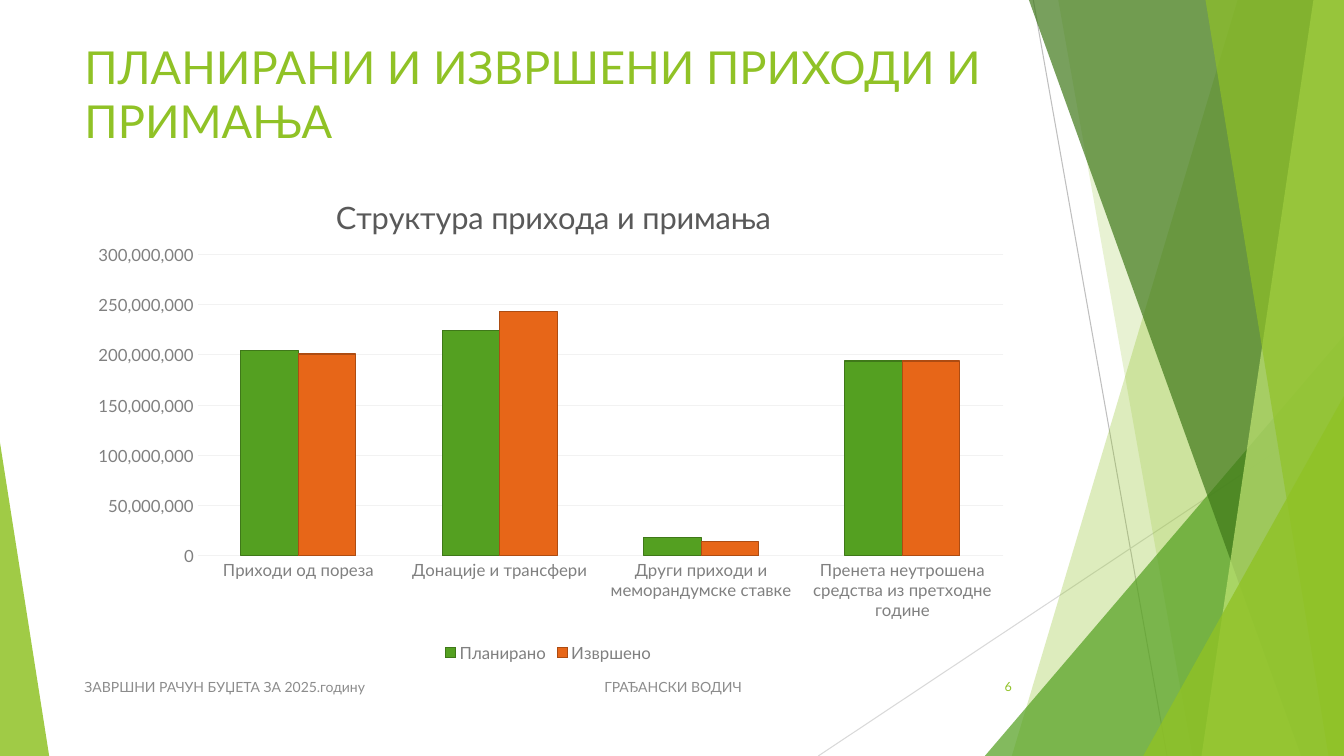
"""Build the slide comparing planned and executed budget revenues."""
from lxml import etree
from pptx import Presentation
from pptx.chart.data import CategoryChartData
from pptx.dml.color import RGBColor
from pptx.enum.chart import XL_CHART_TYPE, XL_LEGEND_POSITION, XL_TICK_MARK
from pptx.enum.shapes import MSO_CONNECTOR, MSO_SHAPE
from pptx.enum.text import MSO_ANCHOR, PP_ALIGN
from pptx.oxml.ns import qn
from pptx.util import Cm, Pt

COLUMNS = XL_CHART_TYPE.COLUMN_CLUSTERED
BOTTOM = XL_LEGEND_POSITION.BOTTOM
NO_TICK = XL_TICK_MARK.NONE
STRAIGHT = MSO_CONNECTOR.STRAIGHT
TRIANGLE = MSO_SHAPE.ISOSCELES_TRIANGLE
TOP, MIDDLE = MSO_ANCHOR.TOP, MSO_ANCHOR.MIDDLE
LEFT, RIGHT = PP_ALIGN.LEFT, PP_ALIGN.RIGHT

FONT = "Lato"
WIDTH, HEIGHT = 33.87, 19.05
GREEN, GREY = "90C226", "808080"


def rgb(code):
    return RGBColor.from_string(code)


def style(font, size, color):
    font.name = FONT
    font.size = Pt(size)
    font.bold = False
    font.color.rgb = rgb(color)


deck = Presentation()
deck.slide_width, deck.slide_height = Cm(WIDTH), Cm(HEIGHT)
page = deck.slides.add_slide(deck.slide_layouts[6])

for x1, y1, x2, y2, color in [
    (26.04, 0, 29.41, HEIGHT, "BFBFBF"),
    (WIDTH, 10.24, 20.62, HEIGHT, "D9D9D9"),
]:
    ray = page.shapes.add_connector(STRAIGHT, Cm(x1), Cm(y1), Cm(x2), Cm(y2))
    ray.line.color.rgb = rgb(color)
    ray.line.width = Pt(0.75)
    etree.SubElement(ray._element.spPr, qn("a:effectLst"))

# Bands give their left edge at top and bottom; triangles give left, width, height and apex.
facets = [
    ((31.19, 25.5), GREEN, 30),
    ((26.67, 30.05), GREEN, 20),
    ((24.82, 9.05, 10.59, 1), "54A021", 72),
    ((25.93, 32.79), "3F7819", 70),
    ((33.1, 30.28), "C0E474", 70),
    ((30.38, 33.48), GREEN, 65),
    ((28.81, 5.06, 9.07, 1), GREEN, 80),
    ((0, 1.24, 7.9, 0), GREEN, 85),
]
for geometry, color, opacity in facets:
    if len(geometry) == 2:
        top_x, bottom_x = geometry
        outline = page.shapes.build_freeform(top_x * 100, 0, scale=Cm(0.01))
        outline.add_line_segments(
            [(x * 100, y * 100) for x, y in
             [(WIDTH, 0), (WIDTH, HEIGHT), (bottom_x, HEIGHT)]], close=True)
        facet = outline.convert_to_shape()
    else:
        left, width, height, apex = geometry
        facet = page.shapes.add_shape(
            TRIANGLE, Cm(left), Cm(HEIGHT - height), Cm(width), Cm(height))
        facet.adjustments[0] = apex
    facet.shadow.inherit = False
    facet.line.fill.background()
    facet.fill.solid()
    facet.fill.fore_color.rgb = rgb(color)
    paint = facet._element.spPr.find(qn("a:solidFill"))[0]
    etree.SubElement(paint, qn("a:alpha"), val=str(opacity * 1000))

texts = [
    ("ПЛАНИРАНИ И ИЗВРШЕНИ ПРИХОДИ И ПРИМАЊА",
     (1.88, 0.86, 23.88, 3.28), 32.4, GREEN, TOP, LEFT),
    ("6", (23.85, 16.79, 1.9, 1.02), 9, GREEN, MIDDLE, RIGHT),
    ("ЗАВРШНИ РАЧУН БУЏЕТА ЗА 2025.годину\tГРАЂАНСКИ ВОДИЧ",
     (1.88, 16.79, 17.5, 1.02), 10, "8C8C8C", MIDDLE, LEFT),
]
for text, place, size, color, anchor, align in texts:
    box = page.shapes.add_textbox(*map(Cm, place))
    box.text_frame.word_wrap = True
    box.text_frame.vertical_anchor = anchor
    para = box.text_frame.paragraphs[0]
    para.alignment = align
    if "\t" in text:
        tabs = etree.SubElement(para._p.get_or_add_pPr(), qn("a:tabLst"))
        etree.SubElement(tabs, qn("a:tab"), pos=str(Cm(13.1)), algn="l")
    span = para.add_run()
    span.text = text
    style(span.font, size, color)

data = CategoryChartData(number_format="#,##0")
data.categories = [
    "Приходи од пореза",
    "Донације и трансфери",
    "Други приходи и меморандумске ставке",
    "Пренета неутрошена средства из претходне године",
]
data.add_series("Планирано", [204000000, 224000000, 18000000, 194000000])
data.add_series("Извршено", [201000000, 243000000, 14000000, 194000000])
chart = page.shapes.add_chart(
    COLUMNS, Cm(1.88), Cm(4.14), Cm(23.88), Cm(12.65), data).chart
style(chart.font, 10, "000000")

chart.has_title = True
span = chart.chart_title.text_frame.paragraphs[0].add_run()
span.text = "Структура прихода и примања"
style(span.font, 22, "595959")
chart.chart_title.include_in_layout = False

chart.has_legend = True
chart.legend.position = BOTTOM
chart.legend.include_in_layout = False
style(chart.legend.font, 12, GREY)

for axis in (chart.category_axis, chart.value_axis):
    axis.major_tick_mark = axis.minor_tick_mark = NO_TICK
    axis.format.line.fill.background()
    style(axis.tick_labels.font, 12, GREY)
values = chart.value_axis
values.minimum_scale, values.maximum_scale = 0, 300000000
values.major_unit = 50000000
values.tick_labels.number_format = "#,##0"
values.tick_labels.number_format_is_linked = False
values.major_gridlines.format.line.color.rgb = rgb("F2F2F2")
values.major_gridlines.format.line.width = Pt(0.75)

plot = chart.plots[0]
plot.gap_width, plot.overlap = 150, 0
plot.vary_by_categories = False
for series, (fill, edge) in zip(
        plot.series, [("54A021", "3F7819"), ("E76618", "AD4C12")]):
    series.format.fill.solid()
    series.format.fill.fore_color.rgb = rgb(fill)
    series.format.line.color.rgb = rgb(edge)
    series.format.line.width = Pt(0.75)

title = chart.chart_title._element
area = chart._chartSpace.chart.plotArea
for parent, index, settings in [
    (title, 1, {"xMode": "edge", "yMode": "edge", "x": 0.27, "y": 0.05}),
    (area, 0, {"layoutTarget": "inner", "xMode": "edge", "yMode": "edge",
               "x": 0.13, "y": 0.18, "w": 0.85, "h": 0.6}),
]:
    for old in parent.findall(qn("c:layout")):
        parent.remove(old)
    layout = etree.Element(qn("c:layout"))
    manual = etree.SubElement(layout, qn("c:manualLayout"))
    for key, value in settings.items():
        etree.SubElement(manual, qn(f"c:{key}"), val=str(value))
    parent.insert(index, layout)

deck.save("out.pptx")
